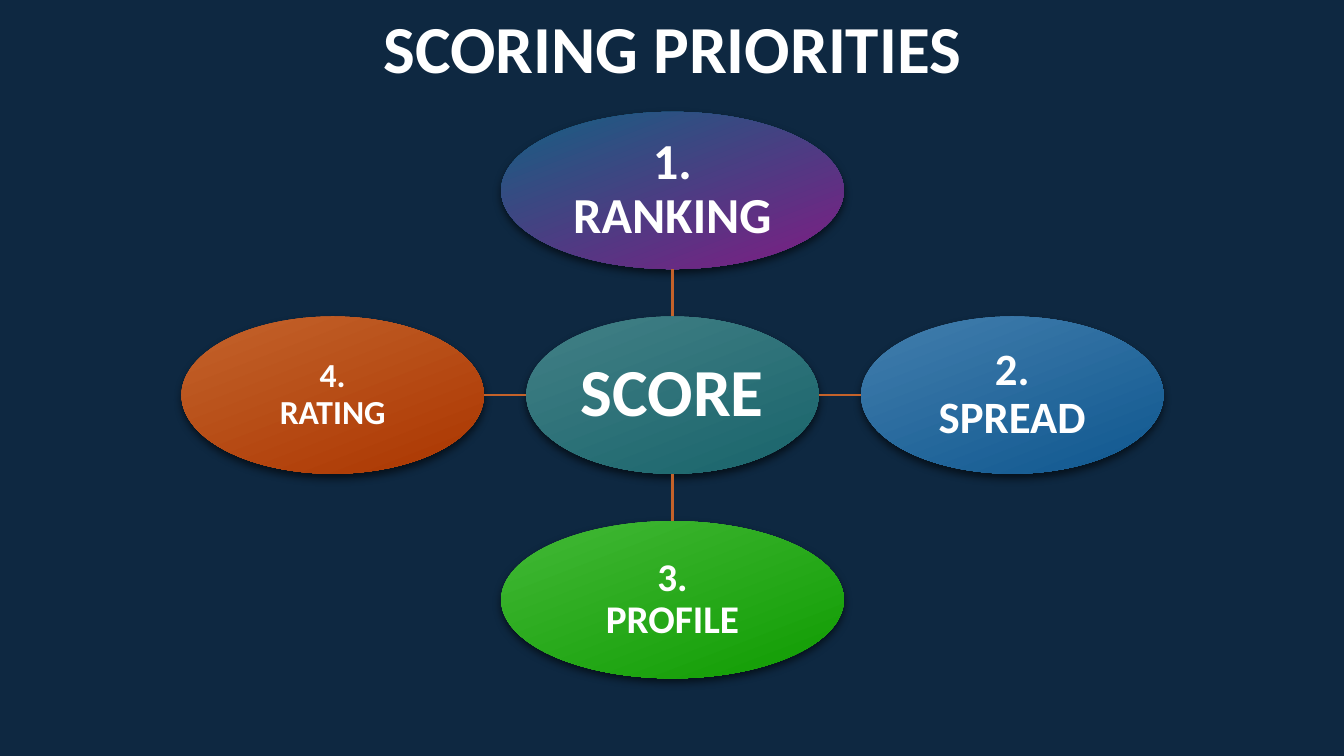
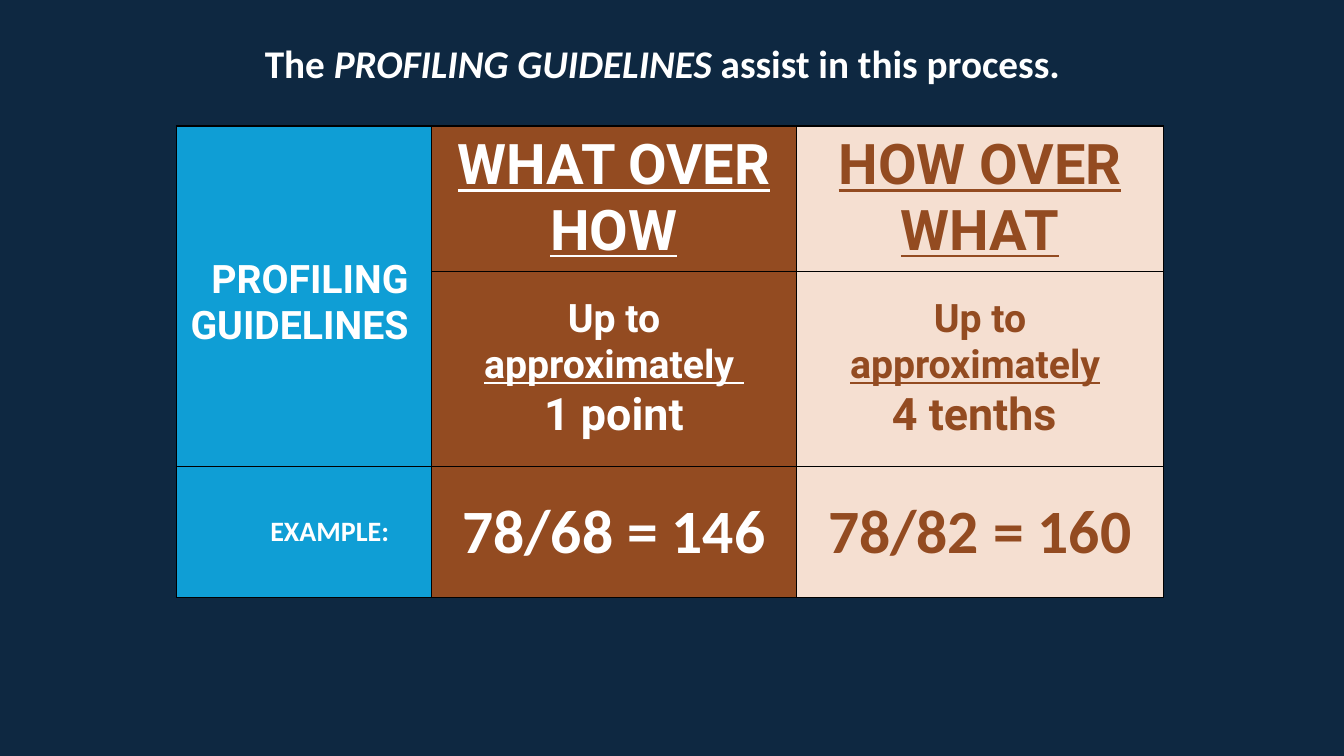
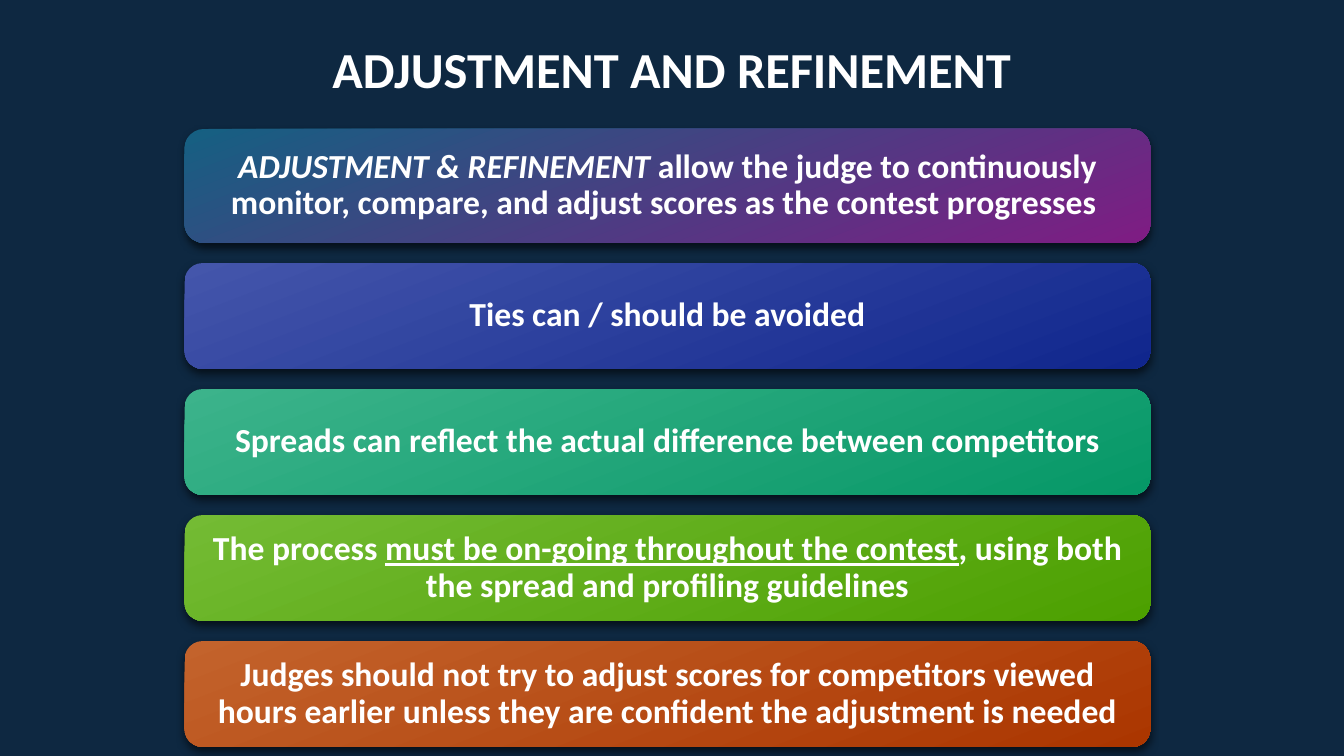
"""Build three slides on scoring priorities, profiling and refinement."""
import lxml.etree
import pptx
import pptx.dml.color
import pptx.enum.shapes
import pptx.enum.text
import pptx.oxml.ns
import pptx.util

Inches = pptx.util.Inches
Pt = pptx.util.Pt
RGB = pptx.dml.color.RGBColor.from_string
KIND = pptx.enum.shapes.MSO_SHAPE
ALIGN = pptx.enum.text.PP_ALIGN
MID = pptx.enum.text.MSO_ANCHOR.MIDDLE
TOP = pptx.enum.text.MSO_ANCHOR.TOP
qn = pptx.oxml.ns.qn
sub = lxml.etree.SubElement

HUES = {
    "navy": "0E2841", "white": "FFFFFF", "black": "000000",
    "line": "C4622A", "sky": "0F9ED5", "brown": "934B21", "cream": "F5DFD1",
}
BLENDS = {
    "teal": ("428086", "19646B"), "plum": ("156082", "7F1C83"),
    "blue": ("427EAD", "0F578F"), "green": ("43B837", "0F9C01"),
    "rust": ("C3632C", "AB3600"), "indigo": ("4456AB", "10268D"),
    "mint": ("3CB38B", "069867"), "lime": ("74BB34", "4CA000"),
}


def write(frame, paras, hue="white", face="Calibri", align=ALIGN.CENTER, space=None):
    """Fill a frame with paragraphs, each a size and its (text, marks) runs."""
    frame.word_wrap = True
    for num, (size, runs) in enumerate(paras):
        para = frame.add_paragraph() if num else frame.paragraphs[0]
        para.alignment = align
        para.line_spacing = space
        for text, marks in runs:
            run = para.add_run()
            run.text = text
            font = run.font
            font.name, font.size, font.bold = face, Pt(size), True
            font.italic, font.underline = "i" in marks, "u" in marks
            font.color.rgb = RGB(HUES[hue])


def block(slide, kind, box, blend, paras, inset):
    """Add a gradient shape with a soft shadow and centred text."""
    shape = slide.shapes.add_shape(kind, *map(Inches, box))
    shape.fill.gradient()
    shape.fill.gradient_angle = 291
    for stop, tint in zip(shape.fill.gradient_stops, BLENDS[blend]):
        stop.color.rgb = RGB(tint)
    shape.line.fill.background()
    shape.shadow.inherit = False
    glow = sub(shape.element.spPr.find(qn("a:effectLst")), qn("a:outerShdw"),
               blurRad=str(Pt(6)), dist=str(Pt(3)), dir="5400000",
               algn="ctr", rotWithShape="0")
    tint = sub(glow, qn("a:srgbClr"), val=HUES["black"])
    sub(tint, qn("a:alpha"), val="60000")
    frame = shape.text_frame
    frame.margin_left = frame.margin_right = Inches(inset)
    frame.margin_top = frame.margin_bottom = Inches(inset)
    frame.vertical_anchor = MID
    write(frame, paras, space=0.9)
    return shape


deck = pptx.Presentation()
deck.slide_width, deck.slide_height = Inches(13.33), Inches(7.5)
back = deck.slide_master.background.fill
back.solid()
back.fore_color.rgb = RGB(HUES["navy"])

titles = [
    ((1.67, 0.01, 10, 0.91), TOP, 48, [("SCORING PRIORITIES", "")]),
    ((1.57, 0.34, 10, 0.57), MID, 28, [
        ("The ", ""), ("PROFILING GUIDELINES ", "i"),
        ("assist in this process.", "")]),
    ((2, 0.33, 9.33, 0.71), TOP, 36, [("ADJUSTMENT AND REFINEMENT", "")]),
]
slides = []
for box, anchor, size, runs in titles:
    slide = deck.slides.add_slide(deck.slide_layouts[6])
    frame = slide.shapes.add_textbox(*map(Inches, box)).text_frame
    frame.vertical_anchor = anchor
    write(frame, [(size, runs)])
    slides.append(slide)
score, guide, refine = slides

mid_x, mid_y, hub_w, tall = 6.67, 3.92, 2.9, 1.56
block(score, KIND.OVAL, (mid_x - hub_w / 2, mid_y - tall / 2, hub_w, tall),
      "teal", [(48, [("SCORE", "")])], 0.03)
spokes = [
    ("RANKING", 36, "plum", 0, -1, 3.4),
    ("SPREAD", 32, "blue", 1, 0, 3),
    ("PROFILE", 28, "green", 0, 1, 3.4),
    ("RATING", 24, "rust", -1, 0, 3),
]
for num, (name, size, blend, dx, dy, wide) in enumerate(spokes, 1):
    x, y = mid_x + dx * 3.37, mid_y + dy * 2.03
    block(score, KIND.OVAL, (x - wide / 2, y - tall / 2, wide, tall), blend,
          [(size, [(f"{num}.", "")]), (size, [(name, "")])], 0.02)
    ends = (mid_x + dx * hub_w / 2, mid_y + dy * tall / 2,
            x - dx * wide / 2, y - dy * tall / 2)
    link = score.shapes.add_connector(
        pptx.enum.shapes.MSO_CONNECTOR.STRAIGHT, *map(Inches, ends))
    link.line.color.rgb = RGB(HUES["line"])
    link.line.width = Pt(1.5)
    sub(link.element.spPr, qn("a:effectLst"))

cols, rows = (2.53, 3.62, 3.64), (1.44, 1.94, 1.3)
grid = guide.shapes.add_table(
    len(rows), len(cols), Inches(1.75), Inches(1.25),
    Inches(sum(cols)), Inches(sum(rows))).table
grid.first_row = grid.horz_banding = False
for col, wide in zip(grid.columns, cols):
    col.width = Inches(wide)
for row, high in zip(grid.rows, rows):
    row.height = Inches(high)
fills = ("sky", "brown", "cream")
inks = ("white", "white", "brown")
cells = [
    [[(28, [("PROFILING GUIDELINES", "")])],
     [(40, [("WHAT OVER HOW", "u")])],
     [(40, [("HOW OVER WHAT", "u")])]],
    [[],
     [(28, [("Up to ", ""), ("approximately ", "u")]), (32, [("1 point", "")])],
     [(28, [("Up to ", ""), ("approximately", "u"), (" ", "")]),
      (32, [("4 tenths ", "")])]],
    [[(20, [("EXAMPLE:", "")])],
     [(44, [("78/68 = 146", "")])],
     [(44, [("78/82 = 160", "")])]],
]
for r, line in enumerate(cells):
    face = "Calibri" if r == 2 else "Roboto"
    for c, paras in enumerate(line):
        cell = grid.cell(r, c)
        cell.margin_left = cell.margin_right = Inches(0.1)
        cell.margin_top = cell.margin_bottom = 0
        cell.vertical_anchor = MID
        for side in ("a:lnL", "a:lnR", "a:lnT", "a:lnB"):
            edge = sub(cell._tc.get_or_add_tcPr(), qn(side), w=str(Pt(1)))
            sub(sub(edge, qn("a:solidFill")), qn("a:srgbClr"), val=HUES["black"])
        cell.fill.solid()
        cell.fill.fore_color.rgb = RGB(HUES[fills[c]])
        write(cell.text_frame, paras, inks[c], face,
              ALIGN.CENTER if c else ALIGN.RIGHT)
head, note = grid.cell(0, 0), grid.cell(2, 0)
head.merge(grid.cell(1, 0))
head.margin_left, head.margin_right = Inches(0.05), Inches(0.23)
head.margin_top = Inches(0.13)
note.margin_right = Inches(0.42)

bars = [
    (1.13, "plum", [
        ("ADJUSTMENT & REFINEMENT", "i"),
        (" allow the judge to continuously monitor, compare, and adjust "
         "scores as the contest progresses ", "")]),
    (1.05, "indigo", [("Ties can / should be avoided", "")]),
    (1.05, "mint", [
        ("Spreads can reflect the actual difference between competitors", "")]),
    (1.05, "lime", [
        ("The process ", ""), ("must be on-going throughout the contest", "u"),
        (", using both the spread and profiling guidelines", "")]),
    (1.05, "rust", [
        ("Judges should not try to adjust scores for competitors viewed hours "
         "earlier unless they are confident the adjustment is needed", "")]),
]
top = 1.28
for high, blend, runs in bars:
    bar = block(refine, KIND.ROUNDED_RECTANGLE, (1.83, top, 9.58, high),
                blend, [(24, runs)], 0.1)
    bar.adjustments[0] = 0.17
    top += high + 0.2

deck.save("out.pptx")
